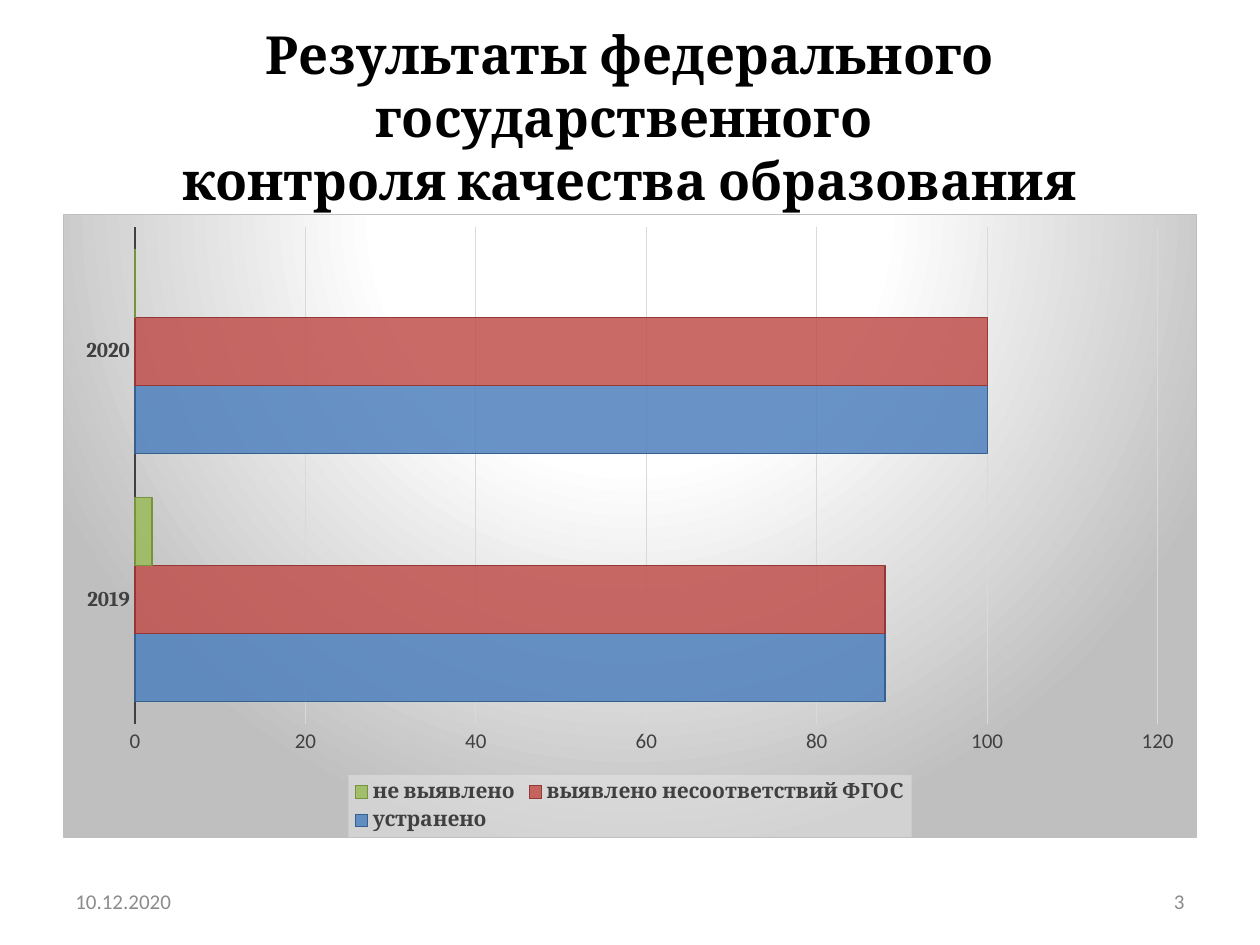
from dataclasses import dataclass

from pptx import Presentation
from pptx.chart.data import CategoryChartData
from pptx.dml.color import RGBColor
from pptx.enum.chart import XL_CHART_TYPE as Chart, XL_LEGEND_POSITION as LegendPos
from pptx.enum.chart import XL_TICK_MARK as Tick
from pptx.enum.text import MSO_ANCHOR as Anchor, MSO_AUTO_SIZE as AutoSize
from pptx.enum.text import PP_ALIGN as Align
from pptx.oxml import parse_xml
from pptx.oxml.ns import nsdecls
from pptx.util import Inches, Pt

BLACK = RGBColor(0x00, 0x00, 0x00)
DARK = RGBColor(0x40, 0x40, 0x40)
GRID = RGBColor(0xD9, 0xD9, 0xD9)
MUTED = RGBColor(0x8C, 0x8C, 0x8C)
HEAD_FONT, BODY_FONT = "Cambria", "Calibri"


@dataclass
class Series:
    name: str
    values: tuple
    fill: RGBColor
    line: RGBColor


@dataclass
class Footer:
    text: str
    left: float
    align: Align


SERIES = [
    Series("устранено", (88, 100), RGBColor(0x4F, 0x81, 0xBD), RGBColor(0x37, 0x60, 0x92)),
    Series("выявлено несоответствий ФГОС", (88, 100),
           RGBColor(0xC0, 0x50, 0x4D), RGBColor(0x95, 0x37, 0x35)),
    Series("не выявлено", (2, 0), RGBColor(0x9B, 0xBB, 0x59), RGBColor(0x77, 0x93, 0x3C)),
]
FOOTERS = [
    Footer("3", 7.17, Align.RIGHT),
    Footer("10.12.2020", 0.5, Align.LEFT),
]

CHART_FILL = f"""<c:spPr {nsdecls('c', 'a')}>
  <a:gradFill><a:gsLst>
    <a:gs pos="0"><a:srgbClr val="FFFFFF"/></a:gs>
    <a:gs pos="39000"><a:srgbClr val="FFFFFF"/></a:gs>
    <a:gs pos="100000"><a:srgbClr val="BFBFBF"/></a:gs>
  </a:gsLst><a:path path="circle">
    <a:fillToRect l="50000" t="-80000" r="50000" b="180000"/>
  </a:path></a:gradFill>
  <a:ln w="9525"><a:solidFill><a:srgbClr val="BFBFBF"/></a:solidFill></a:ln>
</c:spPr>"""
LEGEND_FILL = f"""<c:spPr {nsdecls('c', 'a')}>
  <a:solidFill><a:srgbClr val="F2F2F2"><a:alpha val="39000"/></a:srgbClr></a:solidFill>
</c:spPr>"""


def set_font(font, size: float, color: RGBColor, name: str, bold: bool = False) -> None:
    for key, value in {"size": Pt(size), "name": name, "bold": bold}.items():
        setattr(font, key, value)
    font.color.rgb = color


def set_line(line, color: RGBColor, width: float) -> None:
    line.color.rgb = color
    line.width = Pt(width)


def add_title(slide, text: str) -> None:
    sp = slide.shapes.title
    sp.left, sp.top, sp.width, sp.height = map(Inches, (0.5, 0.3, 9, 1.25))
    tf = sp.text_frame
    tf.auto_size = AutoSize.NONE
    tf.vertical_anchor = Anchor.MIDDLE
    tf.text = text
    p = tf.paragraphs[0]
    p.alignment = Align.CENTER
    for r in p.runs:
        set_font(r.font, 30, BLACK, HEAD_FONT, True)


def add_bar_chart(slide) -> None:
    data = CategoryChartData()
    data.categories = ["2019", "2020"]
    for s in SERIES:
        data.add_series(s.name, s.values)
    frame = slide.shapes.add_chart(
        Chart.BAR_CLUSTERED, *map(Inches, (0.5, 1.7, 9, 4.95)), data)
    chart = frame.chart
    chart.has_title = False
    set_font(chart.font, 10, BLACK, BODY_FONT)

    # Bars
    plot = chart.plots[0]
    plot.gap_width, plot.overlap, plot.vary_by_categories = 65, 0, False
    for bars, s in zip(plot.series, SERIES):
        bars.invert_if_negative = False
        bars.format.fill.solid()
        bars.format.fill.fore_color.rgb = s.fill
        set_line(bars.format.line, s.line, 0.75)
    for color in chart.element.xpath(".//c:ser/c:spPr/a:solidFill/a:srgbClr"):
        color.append(parse_xml(f'<a:alpha {nsdecls("a")} val="85000"/>'))

    # Axes
    cat, val = chart.category_axis, chart.value_axis
    for axis in (cat, val):
        axis.major_tick_mark = axis.minor_tick_mark = Tick.NONE
    set_font(cat.tick_labels.font, 12, DARK, HEAD_FONT, True)
    set_font(val.tick_labels.font, 12, DARK, BODY_FONT)
    set_line(cat.format.line, DARK, 1.5)
    val.format.line.fill.background()
    val.minimum_scale, val.maximum_scale, val.major_unit = 0, 120, 20
    set_line(val.major_gridlines.format.line, GRID, 0.75)

    # Legend
    chart.has_legend = True
    chart.legend.position = LegendPos.BOTTOM
    chart.legend.include_in_layout = False
    set_font(chart.legend.font, 12, DARK, HEAD_FONT, True)

    # Backgrounds of the chart and the legend
    for query, fill in (("./c:txPr", CHART_FILL), (".//c:legend/c:txPr", LEGEND_FILL)):
        chart.element.xpath(query)[0].addprevious(parse_xml(fill))


def add_footer(slide, footer: Footer) -> None:
    sp = slide.shapes.add_textbox(*map(Inches, (footer.left, 6.95, 2.33, 0.4)))
    tf = sp.text_frame
    tf.word_wrap = True
    tf.vertical_anchor = Anchor.MIDDLE
    p = tf.paragraphs[0]
    p.alignment = footer.align
    r = p.add_run()
    r.text = footer.text
    set_font(r.font, 12, MUTED, BODY_FONT)


def main() -> None:
    prs = Presentation()
    prs.slide_width, prs.slide_height = Inches(10), Inches(7.5)
    slide = prs.slides.add_slide(prs.slide_layouts[5])
    add_title(slide, "Результаты федерального государственного \vконтроля качества образования")
    add_bar_chart(slide)
    for footer in FOOTERS:
        add_footer(slide, footer)
    prs.save("out.pptx")


if __name__ == "__main__":
    main()
